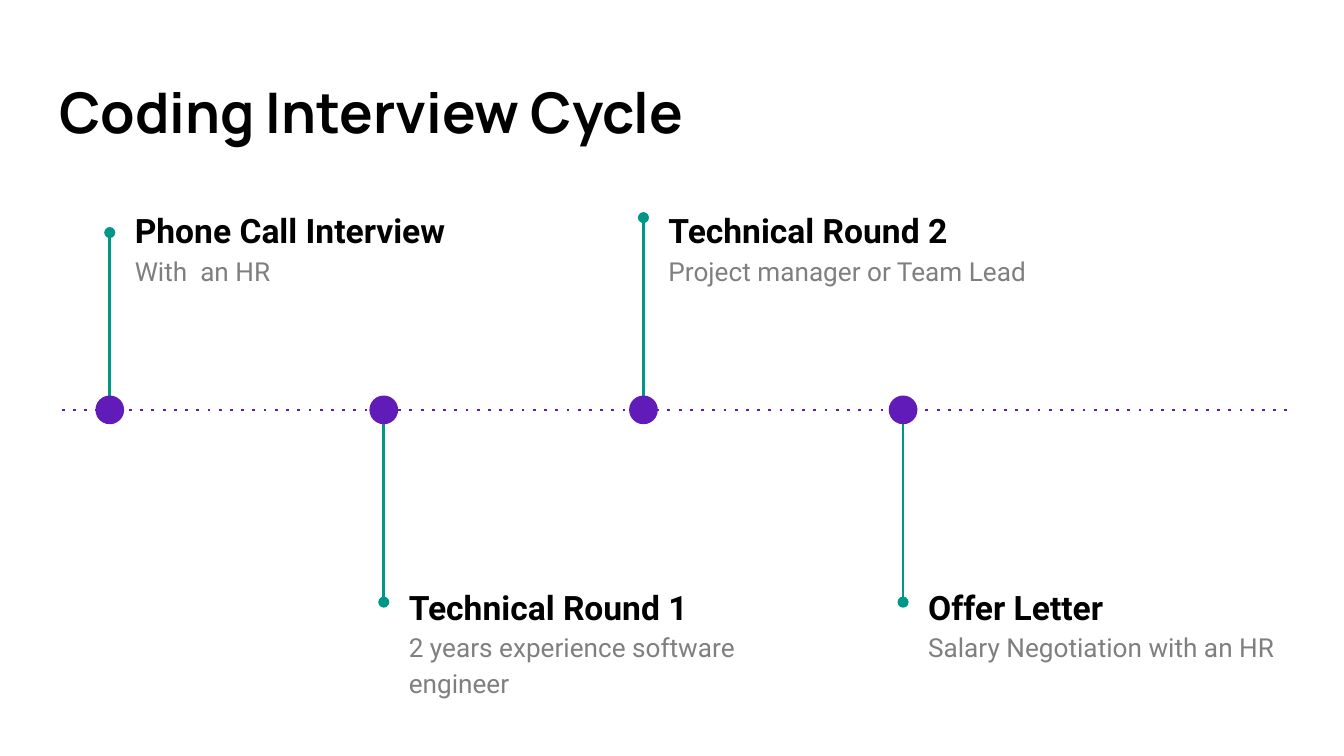
from lxml import etree
from pptx import Presentation
from pptx.dml.color import RGBColor
from pptx.enum import dml, shapes, text
from pptx.oxml.ns import qn
from pptx.util import Pt

PURPLE, TEAL, BLACK, GREY = "611BB8", "009688", "000000", "7F7F7F"
MARKER = 15.4
STAGES = [
    ("Phone Call Interview", "With  an HR", 58.8, -95),
    ("Technical Round 1", "2 years experience software engineer", 205.6, 103),
    ("Technical Round 2", "Project manager or Team Lead", 344.7, -103),
    ("Offer Letter", "Salary Negotiation with an HR", 483.8, 103),
]


def color(value):
    return RGBColor.from_string(value)


def write(paragraph, words, size, font="Roboto", fill=BLACK, bold=False, spacing=None):
    run = paragraph.add_run()
    run.text = words
    run.font.size = Pt(size)
    run.font.name = font
    run.font.bold = bold
    run.font.color.rgb = color(fill)
    paragraph.alignment = text.PP_ALIGN.LEFT
    paragraph.line_spacing = spacing


def fit_frame(frame, anchor):
    frame.word_wrap = True
    frame.auto_size = text.MSO_AUTO_SIZE.NONE
    frame.vertical_anchor = anchor
    frame.margin_left = frame.margin_right = Pt(7.2)
    frame.margin_top = frame.margin_bottom = Pt(7.2)


def add_line(slide, x1, y1, x2, y2, stroke):
    line = slide.shapes.add_connector(
        shapes.MSO_CONNECTOR.STRAIGHT, Pt(x1), Pt(y1), Pt(x2), Pt(y2))
    line.line.color.rgb = color(stroke)
    line.line.width = Pt(1.5)
    etree.SubElement(line._element.spPr, qn("a:effectLst"))
    return line


def add_title(slide, left, top, width, height):
    title = slide.shapes.title
    title.left, title.top = Pt(left), Pt(top)
    title.width, title.height = Pt(width), Pt(height)
    fit_frame(title.text_frame, text.MSO_ANCHOR.MIDDLE)
    write(title.text_frame.paragraphs[0], "Coding Interview Cycle", 30,
          font="Manrope", bold=True)


def add_stage(slide, heading, detail, x, axis, reach):
    side = 1 if reach > 0 else -1
    stem = add_line(slide, x, axis + side * MARKER / 2, x, axis + reach, TEAL)
    etree.SubElement(stem.line._get_or_add_ln(), qn("a:tailEnd"), type="oval")

    marker = slide.shapes.add_shape(
        shapes.MSO_SHAPE.OVAL, Pt(x - MARKER / 2), Pt(axis - MARKER / 2),
        Pt(MARKER), Pt(MARKER))
    marker.shadow.inherit = False
    marker.fill.solid()
    marker.fill.fore_color.rgb = color(PURPLE)
    marker.line.fill.background()

    label_top = axis + (84.2 if side > 0 else -117.4)
    label = slide.shapes.add_textbox(
        Pt(x + 6.3), Pt(label_top), Pt(209.5), Pt(76.3)).text_frame
    fit_frame(label, text.MSO_ANCHOR.TOP)
    write(label.paragraphs[0], heading, 18, bold=True, spacing=1.15)
    write(label.add_paragraph(), detail, 14, fill=GREY, spacing=1.15)


def add_timeline(slide, left, axis, width):
    axis_line = add_line(slide, left, axis, left + width, axis, PURPLE)
    axis_line.line.dash_style = dml.MSO_LINE.ROUND_DOT
    axis_line.line._get_or_add_ln().find(qn("a:prstDash")).set("val", "dot")
    for heading, detail, x, reach in STAGES:
        add_stage(slide, heading, detail, x, axis, reach)


def main():
    deck = Presentation()
    deck.slide_width, deck.slide_height = Pt(720), Pt(405)
    slide = deck.slides.add_slide(deck.slide_layouts[5])
    slide.background.fill.solid()
    slide.background.fill.fore_color.rgb = color("FFFFFF")
    add_title(slide, 24.5, 35.3, 671, 49)
    add_timeline(slide, 33.1, 219.6, 656.7)
    deck.save("out.pptx")


if __name__ == "__main__":
    main()
